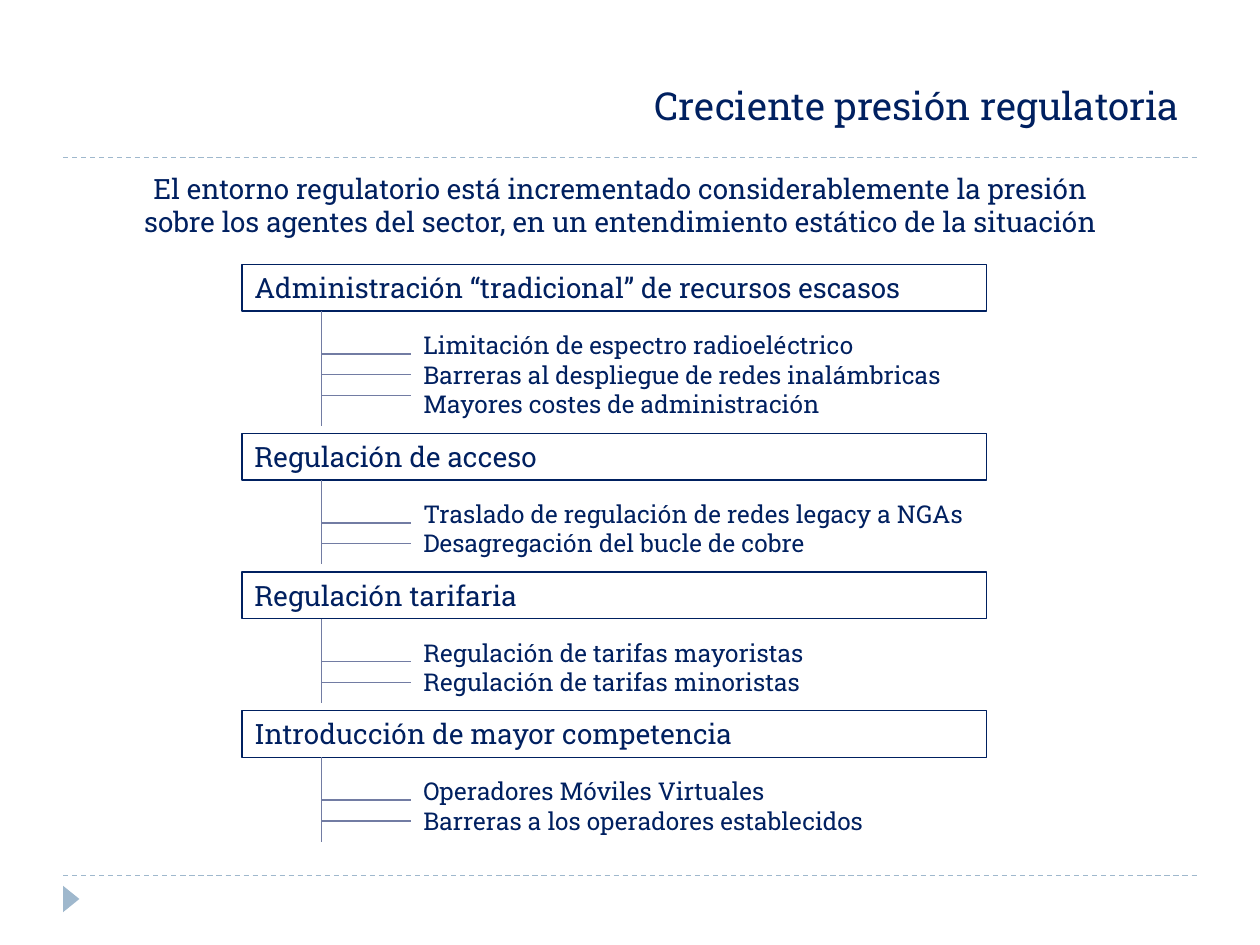
from lxml import etree
from pptx import Presentation
from pptx.dml.color import RGBColor
from pptx.enum.dml import MSO_LINE
from pptx.enum.shapes import MSO_CONNECTOR, MSO_SHAPE
from pptx.enum.text import MSO_ANCHOR as ANCHOR, MSO_AUTO_SIZE as AUTOSIZE, PP_ALIGN as ALIGN
from pptx.oxml.ns import qn
from pptx.util import Inches, Pt

COLORS = {"navy": "002060", "branch": "727CA3", "rule": "9FB8CD"}
FONT = "Roboto Slab"

TITLE = "Creciente presión regulatoria"
STATEMENT = ("El entorno regulatorio está incrementado considerablemente la presión "
             "sobre los agentes del sector, en un entendimiento estático de la situación")
SECTIONS = [
    ("Administración “tradicional” de recursos escasos",
     ["Limitación de espectro radioeléctrico",
      "Barreras al despliegue de redes inalámbricas",
      "Mayores costes de administración"]),
    ("Regulación de acceso",
     ["Traslado de regulación de redes legacy a NGAs",
      "Desagregación del bucle de cobre"]),
    ("Regulación tarifaria",
     ["Regulación de tarifas mayoristas",
      "Regulación de tarifas minoristas"]),
    ("Introducción de mayor competencia",
     ["Operadores Móviles Virtuales",
      "Barreras a los operadores establecidos"]),
]

# Section geometry, in inches
FIRST_TOP, HEADING_HEIGHT = 2.1, 0.37
STEM_X, LIST_X = 2.55, 3.26
LIST_OFFSET, LIST_PADDING, ROW_HEIGHT = 0.47, 0.09, 0.24
BRANCH_OFFSET, BRANCH_STEP = 0.71, 0.165
SECTION_GAP = 0.06


def rgb(name):
    return RGBColor.from_string(COLORS[name])


def place(shape, left, top, width, height):
    box = {"left": left, "top": top, "width": width, "height": height}
    for side, inches in box.items():
        setattr(shape, side, Inches(inches))


def write(shape, lines, size, align=ALIGN.LEFT, anchor=ANCHOR.TOP):
    frame = shape.text_frame
    frame.text = "\n".join(lines)
    frame_format = {"word_wrap": True, "auto_size": AUTOSIZE.NONE, "vertical_anchor": anchor}
    for name, value in frame_format.items():
        setattr(frame, name, value)
    font_format = {"name": FONT, "size": Pt(size), "bold": False}
    for paragraph in frame.paragraphs:
        paragraph.alignment = align
        paragraph.space_before = Pt(0)
        for name, value in font_format.items():
            setattr(paragraph.font, name, value)
            setattr(paragraph.runs[0].font, name, value)
        paragraph.runs[0].font.color.rgb = rgb("navy")


def remove_bullets(shape):
    for paragraph in shape.text_frame.paragraphs:
        properties = paragraph._p.get_or_add_pPr()
        properties.set("marL", "0")
        properties.set("indent", "0")
        bullet_none = etree.Element(qn("a:buNone"))
        spacing = properties.find(qn("a:spcBef"))
        spacing.addnext(bullet_none)


def add_line(slide, x1, y1, x2, y2, color, dash=None):
    line = slide.shapes.add_connector(
        MSO_CONNECTOR.STRAIGHT, Inches(x1), Inches(y1), Inches(x2), Inches(y2))
    line.line.color.rgb = rgb(color)
    line.line.width = Pt(0.75)
    if dash:
        line.line.dash_style = dash
    etree.SubElement(line._element.spPr, qn("a:effectLst"))


def add_frame_marks(slide):
    for y in (1.25, 6.95):
        add_line(slide, 0.5, y, 9.5, y, "rule", MSO_LINE.DASH)
    marker = slide.shapes.add_shape(
        MSO_SHAPE.ISOSCELES_TRIANGLE, Inches(0.46), Inches(7.07), Inches(0.21), Inches(0.13))
    marker.rotation = 90
    marker.shadow.inherit = False
    marker.fill.solid()
    marker.fill.fore_color.rgb = rgb("rule")
    marker.line.fill.background()


def add_heading(slide, text, top):
    heading = slide.shapes.add_shape(
        MSO_SHAPE.RECTANGLE, Inches(1.92), Inches(top), Inches(5.91), Inches(HEADING_HEIGHT))
    heading.shadow.inherit = False
    heading.fill.background()
    heading.line.color.rgb = rgb("navy")
    heading.line.width = Pt(0.75)
    write(heading, [text], 16)


def add_section(slide, heading, items, item_list, top):
    """Draw one section and return its bottom edge."""
    add_heading(slide, heading, top)
    list_height = LIST_PADDING + ROW_HEIGHT * len(items)
    bottom = top + LIST_OFFSET + list_height
    place(item_list, LIST_X, top + LIST_OFFSET, 5.98, list_height)
    write(item_list, items, 14)
    remove_bullets(item_list)
    # Stem with one branch per item
    add_line(slide, STEM_X, top + HEADING_HEIGHT, STEM_X, bottom, "branch")
    for row in range(len(items)):
        y = top + BRANCH_OFFSET + row * BRANCH_STEP
        add_line(slide, STEM_X, y, LIST_X, y, "branch")
    return bottom


def main():
    deck = Presentation()
    deck.slide_width, deck.slide_height = Inches(10), Inches(7.5)
    # The comparison layout has a title and four body placeholders
    slide = deck.slides.add_slide(deck.slide_layouts.get_by_name("Comparison"))
    title, *lists = slide.placeholders

    # Title and statement
    add_frame_marks(slide)
    place(title, 0.51, 0.44, 8.95, 0.63)
    write(title, [TITLE], 22, ALIGN.RIGHT, ANCHOR.BOTTOM)
    statement = slide.shapes.add_textbox(
        Inches(0.83), Inches(1.31), Inches(8.19), Inches(0.64))
    write(statement, [STATEMENT], 16, ALIGN.CENTER)

    # Sections, stacked downwards
    top = FIRST_TOP
    for (heading, items), item_list in zip(SECTIONS, lists):
        top = add_section(slide, heading, items, item_list, top) + SECTION_GAP

    deck.save("out.pptx")


if __name__ == "__main__":
    main()
